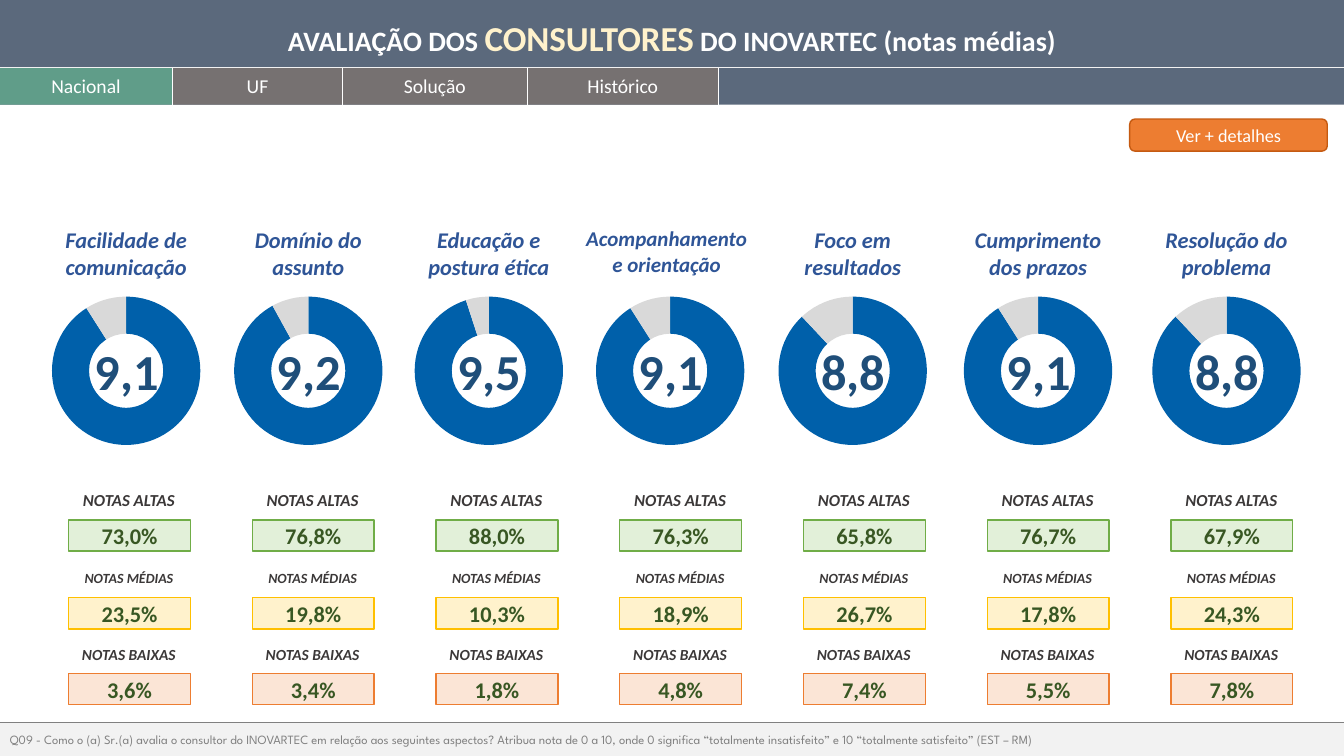
from lxml import etree
from pptx import Presentation
from pptx.chart.data import CategoryChartData
from pptx.dml.color import RGBColor
from pptx.enum.chart import XL_CHART_TYPE
from pptx.enum.shapes import MSO_CONNECTOR, MSO_SHAPE
from pptx.enum.text import MSO_ANCHOR, MSO_AUTO_SIZE, PP_ALIGN
from pptx.oxml.ns import qn
from pptx.util import Cm, Pt

DOUGHNUT = XL_CHART_TYPE.DOUGHNUT
STRAIGHT = MSO_CONNECTOR.STRAIGHT
RECT, ROUNDED, SNIP = (MSO_SHAPE.RECTANGLE, MSO_SHAPE.ROUNDED_RECTANGLE,
                       MSO_SHAPE.SNIP_ROUND_RECTANGLE)
MIDDLE = MSO_ANCHOR.MIDDLE
FIT_SHAPE = MSO_AUTO_SIZE.SHAPE_TO_FIT_TEXT
LEFT, CENTER = PP_ALIGN.LEFT, PP_ALIGN.CENTER

# Content
HEADING = [("AVALIAÇÃO DOS ", "heading", "white"),
           ("CONSULTORES", "emphasis", "cream"),
           (" DO INOVARTEC (notas médias)", "heading", "white")]
TABS = ["Nacional", "UF", "Solução", "Histórico"]
DETAILS = "Ver + detalhes"
# aspect, mean score, chart percentage, shares of high / medium / low scores
ASPECTS = [
    ("Facilidade de comunicação", "9,1", 91, ("73,0%", "23,5%", "3,6%")),
    ("Domínio do assunto", "9,2", 92, ("76,8%", "19,8%", "3,4%")),
    ("Educação e postura ética", "9,5", 95, ("88,0%", "10,3%", "1,8%")),
    ("Acompanhamento e orientação", "9,1", 91, ("76,3%", "18,9%", "4,8%")),
    ("Foco em resultados", "8,8", 88, ("65,8%", "26,7%", "7,4%")),
    ("Cumprimento dos prazos", "9,1", 91, ("76,7%", "17,8%", "5,5%")),
    ("Resolução do problema", "8,8", 88, ("67,9%", "24,3%", "7,8%")),
]
LONG_NAME = "Acompanhamento e orientação"
# band label, label size, label fill, box fill, box line
BANDS = [("NOTAS ALTAS", "high", None, "green_fill", "green"),
         ("NOTAS MÉDIAS", "medium", "white", "cream", "yellow"),
         ("NOTAS BAIXAS", "low", "white", "orange_fill", "orange")]
QUESTION = ("Q09 - Como o (a) Sr.(a) avalia o consultor do INOVARTEC em relação aos "
            "seguintes aspectos? Atribua nota de 0 a 10, onde 0 significa “totalmente "
            "insatisfeito” e 10 “totalmente satisfeito” (EST – RM)")

THEME = {
    "font": "Calibri", "footer_font": "League Spartan",
    "color": {
        "white": "FFFFFF", "cream": "FFF2CC", "slate": "5B697C", "teal": "609D89",
        "taupe": "767171", "pale": "F2F2F2", "gray": "808080", "orange": "ED7D31",
        "rust": "C55A11", "aspect": "2F5597", "score": "1F4E79", "ring": "0060AA",
        "rest": "D9D9D9", "label": "3B3838", "share": "385723", "green": "70AD47",
        "green_fill": "E2F0D9", "yellow": "FFC000", "orange_fill": "FBE5D6",
        "black": "000000",
    },
    "size": {"heading": 20, "emphasis": 25, "tab": 14, "button": 13, "aspect": 16,
             "long_aspect": 15, "score": 36, "share": 16, "high": 12, "medium": 10,
             "low": 11, "footer": 9, "chart": 10},
}

# Layout, in centimetres
WIDTH, HEIGHT = 33.87, 19.05
HEADER_H, TAB_TOP = 2.64, 1.7
TAB_EDGES = [0, 4.34, 8.64, 13.28, 18.11]
FOOTER_TOP = 18.21
RING_CENTERS = [3.18, 7.77, 12.32, 16.89, 21.49, 26.16, 30.91]
CHART_W, CHART_H, RING = 4.78, 4.45, 3.74
SHARE_LEFT, SHARE_PITCH, SHARE_W = 1.73, 4.63, 3.07
LABEL_TOPS, LABEL_H = [12.14, 14.1, 16.03], 0.89
BOX_TOPS, BOX_H = [13.1, 15.06, 16.97], 0.79

prs = Presentation()
prs.slide_width, prs.slide_height = Cm(WIDTH), Cm(HEIGHT)
slide = prs.slides.add_slide(prs.slide_layouts[6])


def rgb(name):
    return RGBColor.from_string(THEME["color"][name])


def style(font, size, color, bold=False, italic=False, face="font"):
    font.name, font.size = THEME[face], Pt(THEME["size"][size])
    font.color.rgb, font.bold, font.italic = rgb(color), bold, italic


def add_box(kind, left, top, width, height, fill, line=None):
    box = slide.shapes.add_shape(kind, Cm(left), Cm(top), Cm(width), Cm(height))
    box.shadow.inherit = False
    if fill:
        box.fill.solid()
        box.fill.fore_color.rgb = rgb(fill)
    else:
        box.fill.background()
    if line:
        box.line.color.rgb, box.line.width = rgb(line), Pt(1)
    else:
        box.line.fill.background()
    return box


def write(box, text, size, color, align=CENTER, **font):
    frame = box.text_frame
    frame.vertical_anchor = MIDDLE
    paragraph = frame.paragraphs[0]
    paragraph.text, paragraph.alignment = text, align
    style(paragraph.font, size, color, **font)


def add_text(left, top, width, height, wrap=True):
    box = slide.shapes.add_textbox(Cm(left), Cm(top), Cm(width), Cm(height))
    box.text_frame.word_wrap, box.text_frame.auto_size = wrap, FIT_SHAPE
    paragraph = box.text_frame.paragraphs[0]
    paragraph.alignment = CENTER
    return paragraph


def add_rule(x1, y1, x2, y2, color, weight):
    rule = slide.shapes.add_connector(STRAIGHT, Cm(x1), Cm(y1), Cm(x2), Cm(y2))
    rule.line.color.rgb, rule.line.width = rgb(color), Pt(weight)
    etree.SubElement(rule.element.spPr, qn("a:effectLst"))


def add_ring(center, percent):
    data = CategoryChartData()
    data.categories = ["1", "2"]
    data.add_series("Series 1", (percent, 100 - percent))
    chart = slide.shapes.add_chart(DOUGHNUT, Cm(center - CHART_W / 2), Cm(7.12),
                                   Cm(CHART_W), Cm(CHART_H), data).chart
    chart.has_legend = chart.has_title = False
    style(chart.font, "chart", "black")
    plot = chart.plots[0]
    plot.has_data_labels, plot.vary_by_categories = False, True
    for index, color in enumerate(("ring", "rest")):
        slice_format = plot.series[0].points[index].format
        slice_format.fill.solid()
        slice_format.fill.fore_color.rgb = rgb(color)
        slice_format.line.fill.background()
    # Hole size and a centred plot area
    next(chart.element.iter(qn("c:holeSize"))).set("val", "85")
    area = next(chart.element.iter(qn("c:plotArea")))
    for automatic in area.findall(qn("c:layout")):
        area.remove(automatic)
    layout = etree.Element(qn("c:layout"))
    area.insert(0, layout)
    manual = etree.SubElement(layout, qn("c:manualLayout"))
    w, h = RING / CHART_W, RING / CHART_H
    for tag, value in (("layoutTarget", "inner"), ("xMode", "edge"), ("yMode", "edge"),
                       ("x", (1 - w) / 2), ("y", (1 - h) / 2), ("w", w), ("h", h)):
        etree.SubElement(manual, qn("c:" + tag)).set("val", str(value))


# Footer
footer = add_box(RECT, 0, FOOTER_TOP, WIDTH, HEIGHT - FOOTER_TOP, "pale")
write(footer, QUESTION, "footer", "gray", LEFT, face="footer_font")
add_rule(0, FOOTER_TOP, WIDTH, FOOTER_TOP, "gray", 0.5)

# Header and tabs
add_box(RECT, 0, 0, WIDTH, HEADER_H, "slate")
heading = add_text(0, 0.3, WIDTH, 1.32)
for words, size, color in HEADING:
    run = heading.add_run()
    run.text = words
    style(run.font, size, color, bold=True)
for name, left, right in zip(TABS, TAB_EDGES, TAB_EDGES[1:]):
    tab = add_box(RECT, left, TAB_TOP, right - left, HEADER_H - TAB_TOP,
                  "teal" if name == TABS[0] else "taupe")
    write(tab, name, "tab", "white")
for edge in TAB_EDGES[1:]:
    add_rule(edge, TAB_TOP, edge, HEADER_H, "white", 0.5)
add_rule(0, TAB_TOP, WIDTH, TAB_TOP, "pale", 1)

# Details button
button = add_box(ROUNDED, 28.47, 3, 4.98, 0.81, "orange", "rust")
write(button, DETAILS, "button", "white")

# One column per aspect: name, ring with mean score, shares by band
for column, (aspect, score, percent, shares) in enumerate(ASPECTS):
    center = RING_CENTERS[column]
    is_long = aspect == LONG_NAME
    name_w = 4.65 if is_long else 3.78
    name_center = center - 0.09 if is_long else center
    name = add_text(name_center - name_w / 2, 5.57, name_w, 1.63)
    name.text = aspect
    style(name.font, "long_aspect" if is_long else "aspect", "aspect", True, True)
    add_ring(center, percent)
    mean = add_text(center - 1.05, 8.44, 2.13, 1.8, wrap=False)
    mean.text = score
    style(mean.font, "score", "score", bold=True)

    left = SHARE_LEFT + column * SHARE_PITCH
    for band, share, label_top, box_top in zip(BANDS, shares, LABEL_TOPS, BOX_TOPS):
        title, size, label_fill, fill, line = band
        label = add_box(SNIP, left, label_top, SHARE_W, LABEL_H, label_fill)
        label.text_frame.margin_left = label.text_frame.margin_right = 0
        write(label, title, size, "label", bold=True, italic=True)
        box = add_box(RECT, left, box_top, SHARE_W, BOX_H, fill, line)
        write(box, share, "share", "share", bold=True)

prs.save("out.pptx")
